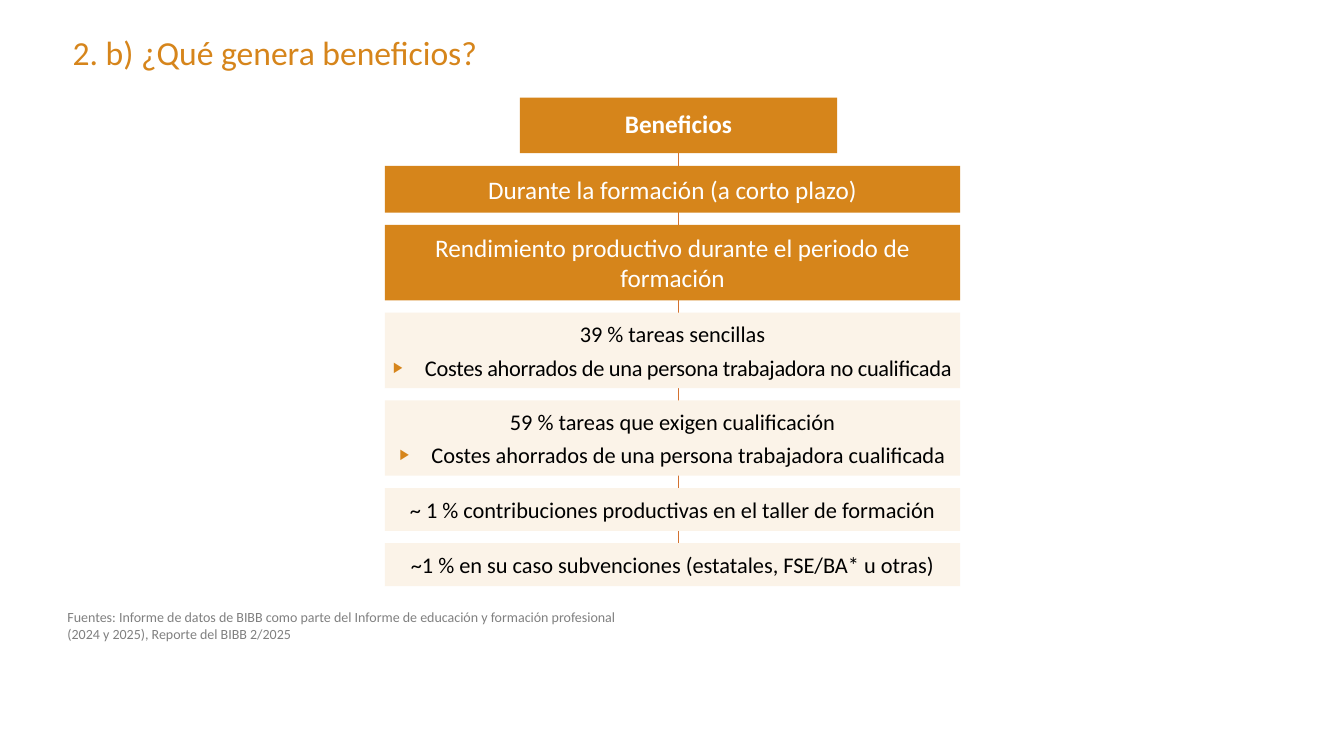
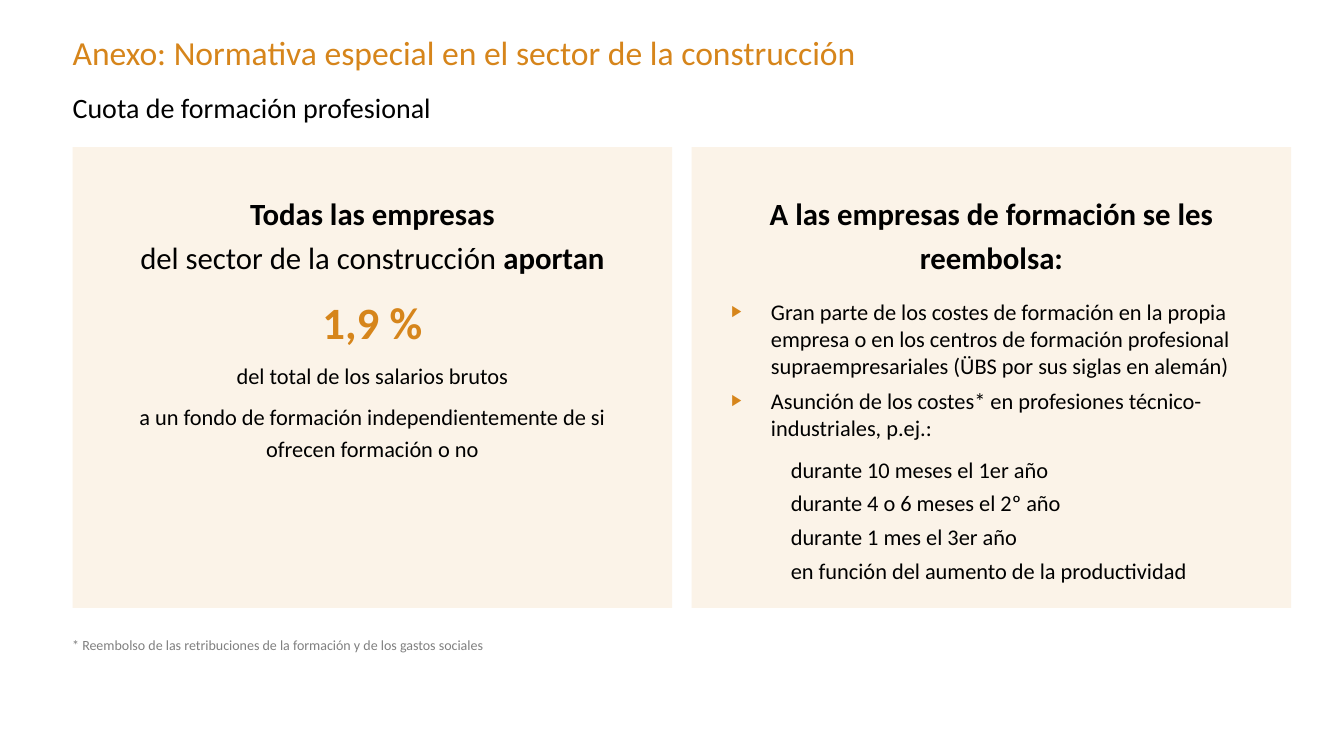
"""Build two slides on the benefits of training and the construction-sector levy."""
import lxml.etree
import pptx
import pptx.dml.color
import pptx.enum.shapes
import pptx.enum.text
import pptx.oxml.ns
import pptx.util

Cm = pptx.util.Cm
Pt = pptx.util.Pt
ORANGE, CREAM, RUST = "D6851B", "FBF3E8", "D37230"
WHITE, BLACK, GREY = "FFFFFF", "000000", "808080"
FONT = "Calibri"
MARGIN = 1.83
CENTER = pptx.enum.text.PP_ALIGN.CENTER
TOP = pptx.enum.text.MSO_ANCHOR.TOP
MIDDLE = pptx.enum.text.MSO_ANCHOR.MIDDLE
NO_INSETS = (0, 0, 0, 0)
BAND_INSETS = (0.1, 0.2, 0.1, 0.2)
PANEL_INSETS = (1, 1, 1, 1)
NOTE_INSETS = (0.25, 0.13, 0.25, 0.13)


def color(value):
    """Turn a hex string into a colour."""
    return pptx.dml.color.RGBColor.from_string(value)


def apply_format(target, values):
    """Set attributes from a dict of format values."""
    for name, value in values.items():
        setattr(target, name, value)


def text_run(text, size, tint=BLACK, bold=False, spacing=0):
    """Describe one run of text."""
    return {"text": text, "size": size, "tint": tint, "bold": bold, "spacing": spacing}


def text_line(*runs, bullet=None, indent=0, hanging=0, **values):
    """Describe one paragraph with its runs, bullet size, indents and format."""
    return {"runs": runs, "bullet": bullet, "indent": indent,
            "hanging": hanging, "values": values}


def add_bullet(properties, percent):
    """Give paragraph properties an orange triangle bullet."""
    qualify = pptx.oxml.ns.qn
    bullet_color = lxml.etree.SubElement(properties, qualify("a:buClr"))
    lxml.etree.SubElement(bullet_color, qualify("a:srgbClr"), val=ORANGE)
    lxml.etree.SubElement(properties, qualify("a:buSzPct"), val=str(percent * 1000))
    lxml.etree.SubElement(properties, qualify("a:buFont"), typeface="Arial")
    lxml.etree.SubElement(properties, qualify("a:buChar"), char="▶")


def write_run(paragraph, content):
    """Add one formatted run to a paragraph."""
    run = paragraph.add_run()
    run.text = content["text"]
    apply_format(run.font, {"name": FONT, "size": Pt(content["size"]),
                            "bold": content["bold"]})
    run.font.color.rgb = color(content["tint"])
    if content["spacing"]:
        run._r.get_or_add_rPr().set("spc", str(round(content["spacing"] * 100)))


def write_text(shape, lines, insets, anchor=TOP):
    """Fill a shape with paragraphs."""
    frame = shape.text_frame
    sides = ("margin_left", "margin_top", "margin_right", "margin_bottom")
    apply_format(frame, dict(zip(sides, map(Cm, insets))))
    apply_format(frame, {"word_wrap": True, "vertical_anchor": anchor})
    for index, line in enumerate(lines):
        paragraph = frame.add_paragraph() if index else frame.paragraphs[0]
        properties = paragraph._p.get_or_add_pPr()
        properties.set("marL", str(Cm(line["indent"])))
        properties.set("indent", str(-Cm(line["hanging"])))
        if line["bullet"]:
            add_bullet(properties, line["bullet"])
        apply_format(paragraph, line["values"])
        for content in line["runs"]:
            write_run(paragraph, content)


def add_text(slide, box, lines, insets=NO_INSETS):
    """Add a text box."""
    write_text(slide.shapes.add_textbox(*map(Cm, box)), lines, insets)


def add_box(slide, box, fill, lines, insets, anchor=MIDDLE):
    """Add a filled rectangle with text."""
    rectangle = pptx.enum.shapes.MSO_SHAPE.RECTANGLE
    shape = slide.shapes.add_shape(rectangle, *map(Cm, box))
    shape.shadow.inherit = False
    shape.fill.solid()
    shape.fill.fore_color.rgb = color(fill)
    shape.line.fill.background()
    write_text(shape, lines, insets, anchor)


def add_stem(slide, x, top, bottom):
    """Add the thin vertical line that joins the bands."""
    straight = pptx.enum.shapes.MSO_CONNECTOR.STRAIGHT
    stem = slide.shapes.add_connector(straight, Cm(x), Cm(top), Cm(x), Cm(bottom))
    stem.line.color.rgb = color(RUST)
    stem.line.width = Pt(0.5)
    lxml.etree.SubElement(stem._element.spPr, pptx.oxml.ns.qn("a:effectLst"))


def add_titled_slide(presentation, title):
    """Add a blank slide with the shared title style."""
    slide = presentation.slides.add_slide(presentation.slide_layouts[6])
    add_text(slide, (MARGIN, 0.81, 25, 1.25), [text_line(text_run(title, 24, ORANGE))])
    return slide


def add_note(slide, left, top, height, texts):
    """Add a small grey note."""
    lines = [text_line(text_run(text, 10, GREY)) for text in texts]
    add_text(slide, (left, top, 20.3, height), lines, NOTE_INSETS)


def heading(text):
    """Describe the text of an orange band."""
    return [text_line(text_run(text, 18, WHITE), alignment=CENTER)]


def detail(text, saving=None, spacing=0):
    """Describe the text of a cream band, with an optional bullet below."""
    lines = [text_line(text_run(text, 16), alignment=CENTER)]
    if saving:
        lines.append(text_line(text_run(saving, 16, spacing=spacing), bullet=65,
                               indent=0.8, hanging=0.8, alignment=CENTER,
                               line_spacing=Pt(22), space_before=Pt(2),
                               space_after=Pt(2)))
    return lines


def build_benefits(presentation):
    """Build the slide with the stack of benefits."""
    slide = add_titled_slide(presentation, "2. b) ¿Qué genera beneficios?")
    left, width, gap, first_top = 9.7, 14.5, 0.31, 4.18
    header_left, header_top, header_width, header_height = 13.1, 2.46, 8, 1.4
    bands = [
        (1.18, ORANGE, heading("Durante la formación (a corto plazo)")),
        (1.9, ORANGE, heading("Rendimiento productivo durante el periodo de formación")),
        (1.9, CREAM, detail("39 % tareas sencillas",
                            "Costes ahorrados de una persona trabajadora no cualificada",
                            -0.2)),
        (1.9, CREAM, detail("59 % tareas que exigen cualificación",
                            "Costes ahorrados de una persona trabajadora cualificada")),
        (1.08, CREAM, detail("~ 1 % contribuciones productivas en el taller de formación")),
        (1.08, CREAM, detail("~1 % en su caso subvenciones (estatales, FSE/BA* u otras)")),
    ]
    last_top = first_top + sum(height + gap for height, _, _ in bands[:-1])
    add_stem(slide, header_left + header_width / 2, header_top + header_height, last_top)
    add_box(slide, (header_left, header_top, header_width, header_height), ORANGE,
            [text_line(text_run("Beneficios", 18, WHITE, True), alignment=CENTER,
                       line_spacing=0.9)], NO_INSETS)
    top = first_top
    for height, fill, lines in bands:
        add_box(slide, (left, top, width, height), fill, lines, BAND_INSETS)
        top += height + gap
    add_note(slide, 1.45, 15.21, 1.55, [
        "Fuentes: Informe de datos de BIBB como parte del Informe de educación y formación profesional",
        "(2024 y 2025), Reporte del BIBB 2/2025"])


def build_construction(presentation):
    """Build the slide on the construction-sector levy."""
    slide = add_titled_slide(presentation,
                             "Anexo: Normativa especial en el sector de la construcción")
    add_text(slide, (MARGIN, 2.29, 30.71, 1.22),
             [text_line(text_run("Cuota de formación profesional", 20))])
    centered = {"alignment": CENTER, "line_spacing": 1.2}
    spaced = {**centered, "space_before": Pt(6)}
    contribution = [
        text_line(text_run("Todas las empresas", 22, bold=True), **centered),
        text_line(text_run("del sector de la construcción ", 22),
                  text_run("aportan", 22, bold=True), **centered),
        text_line(text_run("1,9 %", 32, ORANGE, True), **spaced),
        text_line(text_run("del total de los salarios brutos", 16), **spaced),
        text_line(text_run("a un fondo de formación independientemente de si "
                           "ofrecen formación o no", 16), **spaced),
    ]
    refunds = [
        ("Gran parte de los costes de formación en la propia empresa o en los centros de "
         "formación profesional supraempresariales (ÜBS por sus siglas en alemán)", 16),
        ("Asunción de los costes* en profesiones técnico-industriales, p.ej.:", 6),
    ]
    periods = [
        ("durante 10 meses el 1er año", 6),
        ("durante 4 o 6 meses el 2º año", 0),
        ("durante 1 mes el 3er año", 0),
        ("en función del aumento de la productividad", 0),
    ]
    refund = [text_line(text_run("A las empresas de formación se les reembolsa:", 22,
                                 bold=True), **centered)]
    refund += [text_line(text_run(text, 16), bullet=70, indent=1, hanging=1,
                         space_before=Pt(before)) for text, before in refunds]
    refund += [text_line(text_run(text, 16), indent=1.5, line_spacing=Pt(24),
                         space_before=Pt(before)) for text, before in periods]
    width, gap = 15.11, 0.49
    for index, lines in enumerate((contribution, refund)):
        add_box(slide, (MARGIN + index * (width + gap), 3.71, width, 11.61), CREAM,
                lines, PANEL_INSETS, TOP)
    add_note(slide, 1.57, 15.9, 0.69,
             ["* Reembolso de las retribuciones de la formación y de los gastos sociales"])


def main():
    """Create and save the presentation."""
    presentation = pptx.Presentation()
    apply_format(presentation, {"slide_width": Cm(33.87), "slide_height": Cm(19.05)})
    build_benefits(presentation)
    build_construction(presentation)
    presentation.save("out.pptx")


if __name__ == "__main__":
    main()
